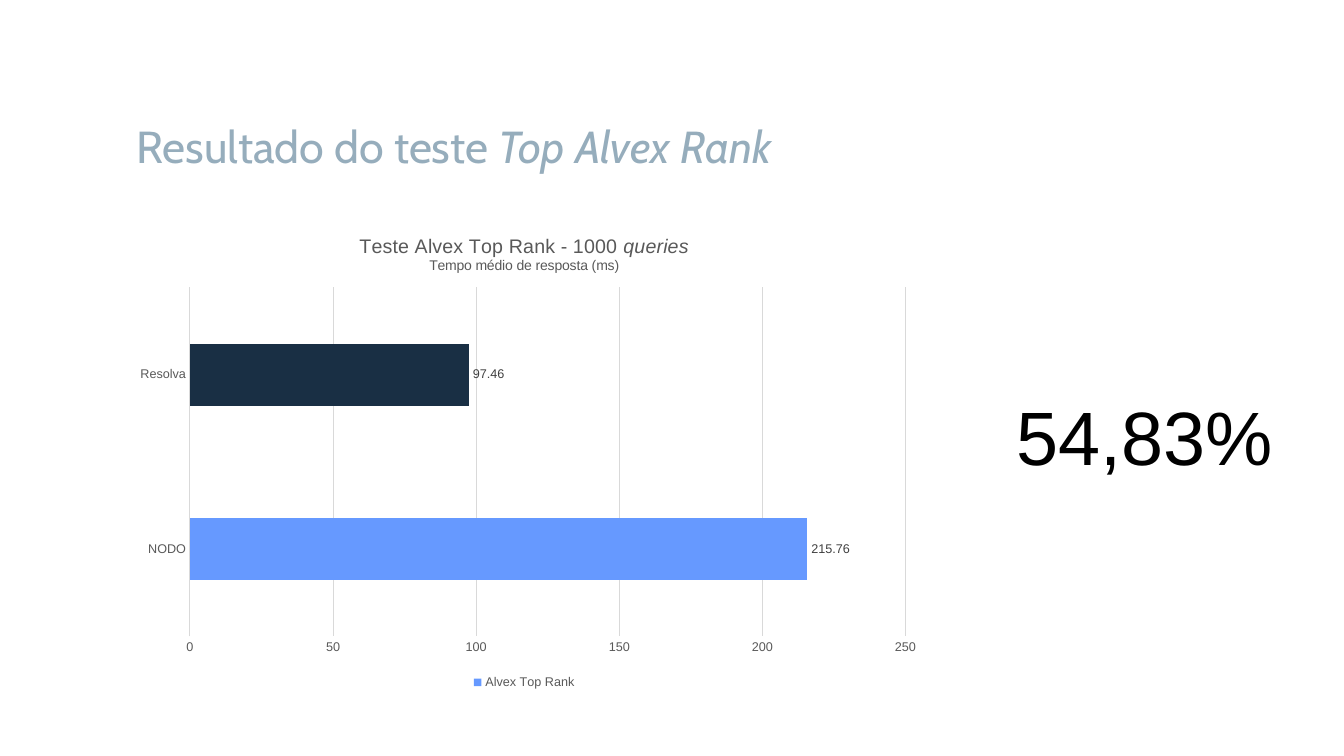
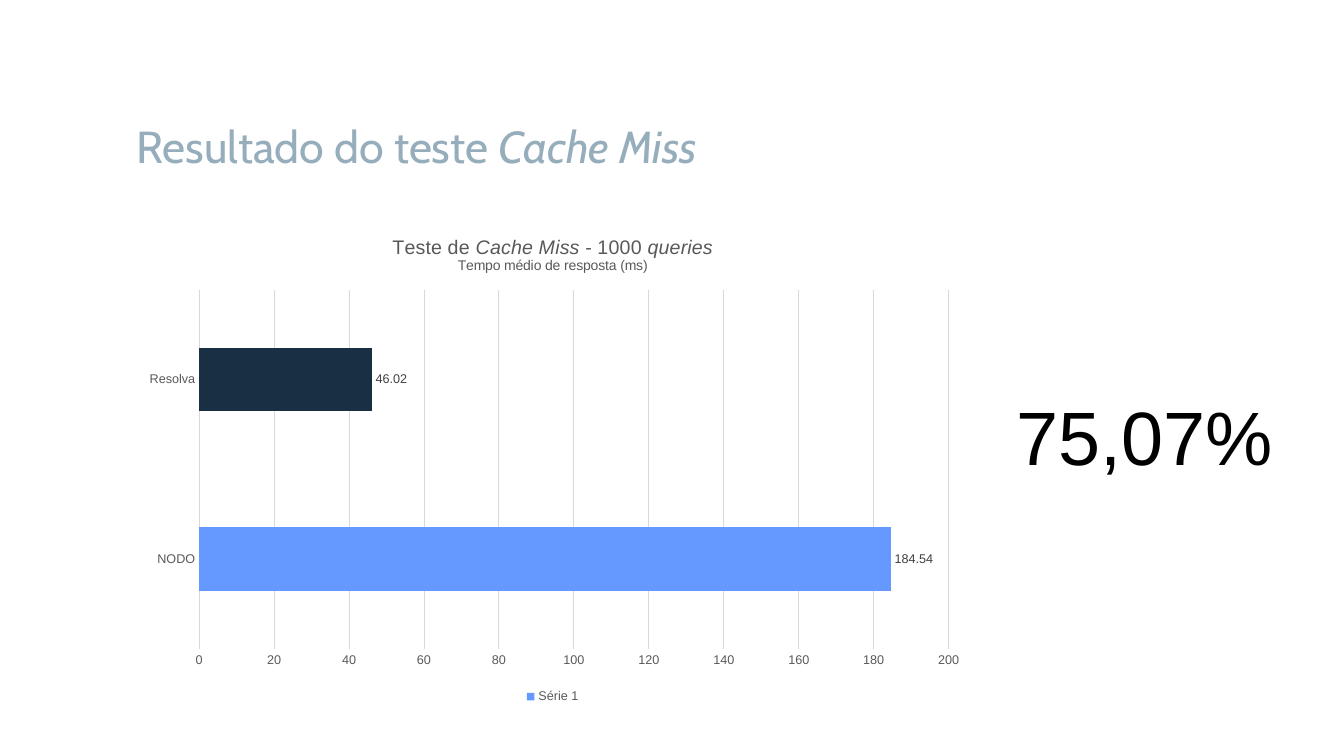
from dataclasses import dataclass

from lxml.etree import SubElement
from pptx import Presentation
from pptx.chart.chart import Chart
from pptx.chart.data import CategoryChartData
from pptx.dml.color import RGBColor
from pptx.enum.chart import XL_CHART_TYPE as ChartType
from pptx.enum.chart import XL_LABEL_POSITION as LabelPosition
from pptx.enum.chart import XL_LEGEND_POSITION as LegendPosition
from pptx.enum.chart import XL_TICK_MARK as TickMark
from pptx.enum.text import MSO_ANCHOR as Anchor
from pptx.enum.text import MSO_AUTO_SIZE as AutoSize
from pptx.oxml.ns import qn
from pptx.slide import Slide
from pptx.text.text import Font
from pptx.util import Inches, Pt

SLIDE_W, SLIDE_H = Inches(13.33), Inches(7.5)
COLUMNS, ROWS = 160, 90

TITLE_BLUE = RGBColor(0x96, 0xAD, 0xBC)
BAR_BLUE = RGBColor(0x66, 0x99, 0xFF)
BAR_NAVY = RGBColor(0x19, 0x2F, 0x44)
AXIS_GRAY = RGBColor(0x59, 0x59, 0x59)
LABEL_GRAY = RGBColor(0x40, 0x40, 0x40)
GRID_GRAY = RGBColor(0xD9, 0xD9, 0xD9)
BLACK = RGBColor(0, 0, 0)

BODY_FONT, TITLE_FONT = "Arial", "Cabin"
SERVERS = ("NODO", "Resolva")
SUBTITLE = "Tempo médio de resposta (ms)"


@dataclass(frozen=True)
class Area:
    column: float
    row: float
    columns: float
    rows: float

    def box(self) -> tuple[int, int, int, int]:
        cell_w, cell_h = SLIDE_W / COLUMNS, SLIDE_H / ROWS
        return (round(self.column * cell_w), round(self.row * cell_h),
                round(self.columns * cell_w), round(self.rows * cell_h))


@dataclass(frozen=True)
class Run:
    text: str
    italic: bool = False


@dataclass(frozen=True)
class Result:
    test: str
    heading: tuple[Run, ...]
    series: str
    times: tuple[float, float]
    axis_max: int
    axis_step: int
    gain: str
    area: Area


TITLE_AREA = Area(15.1, 12.7, 115, 9.2)
GAIN_AREA = Area(119.8, 45.8, 35.2, 12.1)
LABEL_COLUMNS = 8.6
PLOT_TOP, PLOT_W, PLOT_H = 0.15, 0.88, 0.73

RESULTS = (
    Result("Top Alvex Rank",
           (Run("Teste Alvex Top Rank - 1000 "), Run("queries", True)),
           "Alvex Top Rank", (215.76, 97.46), 250, 50, "54,83%",
           Area(14, 25.7, 96.8, 56.9)),
    Result("Cache Miss",
           (Run("Teste de "), Run("Cache Miss", True), Run(" - 1000 "),
            Run("queries", True)),
           "Série 1", (184.54, 46.02), 200, 20, "75,07%",
           Area(15.1, 25.7, 101.4, 58.6)),
)


def style(font: Font, size: float, color: RGBColor, name: str = BODY_FONT) -> None:
    font.name, font.size, font.bold = name, Pt(size), False
    font.color.rgb = color


def add_runs(paragraph, runs: tuple[Run, ...], size: float, color: RGBColor,
             name: str = BODY_FONT) -> None:
    for part in runs:
        run = paragraph.add_run()
        run.text = part.text
        style(run.font, size, color, name)
        run.font.italic = part.italic


def add_text(slide: Slide, area: Area, runs: tuple[Run, ...], size: float,
             color: RGBColor, name: str, anchor: Anchor, fit: AutoSize) -> None:
    frame = slide.shapes.add_textbox(*area.box()).text_frame
    frame.word_wrap = True
    frame.auto_size = fit
    frame.vertical_anchor = anchor
    add_runs(frame.paragraphs[0], runs, size, color, name)


def place_plot(chart: Chart, left: float) -> None:
    plot_area = chart.element.find(".//" + qn("c:plotArea"))
    for old in plot_area.findall(qn("c:layout")):
        plot_area.remove(old)
    layout = SubElement(plot_area, qn("c:layout"))
    plot_area.insert(0, layout)
    manual = SubElement(layout, qn("c:manualLayout"))
    settings = (("layoutTarget", "inner"), ("xMode", "edge"), ("yMode", "edge"),
                ("x", left), ("y", PLOT_TOP), ("w", PLOT_W), ("h", PLOT_H))
    for tag, value in settings:
        SubElement(manual, qn(f"c:{tag}")).set("val", str(value))


def style_axes(chart: Chart, result: Result) -> None:
    servers, times = chart.category_axis, chart.value_axis
    for axis in (servers, times):
        axis.major_tick_mark = axis.minor_tick_mark = TickMark.NONE
        style(axis.tick_labels.font, 9, AXIS_GRAY)
    servers.has_major_gridlines = False
    times.has_major_gridlines = True
    for line in (servers.format.line, times.major_gridlines.format.line):
        line.color.rgb = GRID_GRAY
        line.width = Pt(0.75)
    times.format.line.fill.background()
    times.minimum_scale, times.maximum_scale = 0, result.axis_max
    times.major_unit = result.axis_step


def style_bars(chart: Chart) -> None:
    plot = chart.plots[0]
    plot.gap_width = 182
    plot.vary_by_categories = False
    bars = plot.series[0]
    for target, color in ((bars, BAR_BLUE), (bars.points[1], BAR_NAVY)):
        target.format.fill.solid()
        target.format.fill.fore_color.rgb = color
    labels = bars.data_labels
    labels.show_value = True
    labels.position = LabelPosition.OUTSIDE_END
    style(labels.font, 9, LABEL_GRAY)


def add_times_chart(slide: Slide, result: Result) -> None:
    data = CategoryChartData()
    data.categories = SERVERS
    data.add_series(result.series, result.times)
    chart = slide.shapes.add_chart(
        ChartType.BAR_CLUSTERED, *result.area.box(), data).chart
    style(chart.font, 10, BLACK)
    heading = chart.chart_title.text_frame
    add_runs(heading.paragraphs[0], result.heading, 14, AXIS_GRAY)
    add_runs(heading.add_paragraph(), (Run(SUBTITLE),), 10, AXIS_GRAY)
    chart.chart_title.include_in_layout = False
    chart.has_legend = True
    chart.legend.position = LegendPosition.BOTTOM
    chart.legend.include_in_layout = False
    style(chart.legend.font, 9, AXIS_GRAY)
    style_axes(chart, result)
    style_bars(chart)
    place_plot(chart, round(LABEL_COLUMNS / result.area.columns, 3))


def add_result(deck, result: Result) -> None:
    slide = deck.slides.add_slide(deck.slide_layouts[6])
    add_text(slide, TITLE_AREA,
             (Run("Resultado do teste "), Run(result.test, True)),
             32, TITLE_BLUE, TITLE_FONT, Anchor.MIDDLE, AutoSize.NONE)
    add_times_chart(slide, result)
    add_text(slide, GAIN_AREA, (Run(result.gain),), 54, BLACK, BODY_FONT,
             Anchor.TOP, AutoSize.SHAPE_TO_FIT_TEXT)


def main() -> None:
    deck = Presentation()
    deck.slide_width, deck.slide_height = SLIDE_W, SLIDE_H
    for result in RESULTS:
        add_result(deck, result)
    deck.save("out.pptx")


if __name__ == "__main__":
    main()
